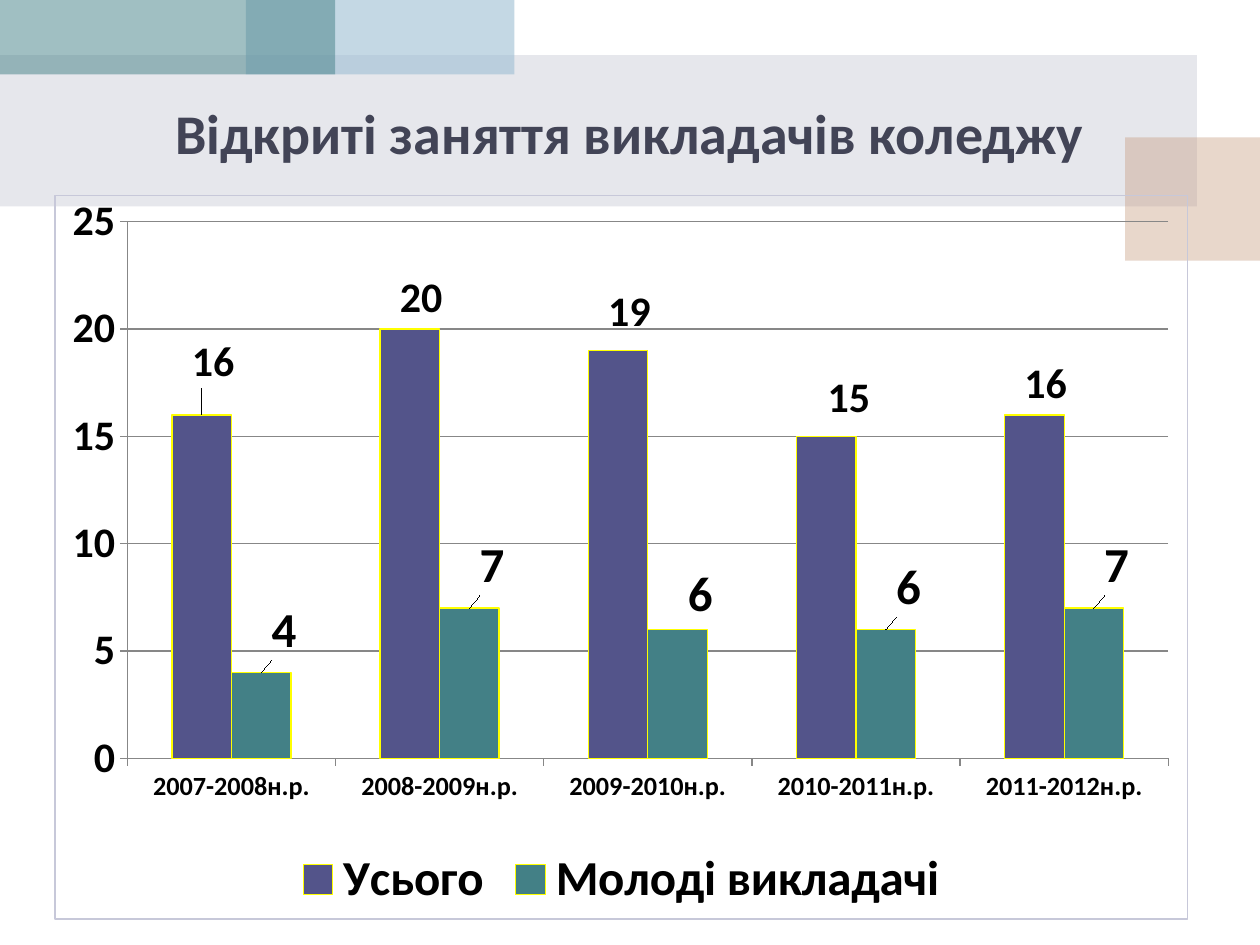
from dataclasses import dataclass

from lxml import etree
from pptx import Presentation
from pptx.chart.data import CategoryChartData
from pptx.dml.color import RGBColor
from pptx.enum.chart import XL_CHART_TYPE, XL_LABEL_POSITION, XL_LEGEND_POSITION, XL_TICK_MARK
from pptx.enum.shapes import MSO_SHAPE
from pptx.enum.text import MSO_ANCHOR, MSO_AUTO_SIZE, PP_ALIGN
from pptx.oxml import parse_xml
from pptx.oxml.ns import qn
from pptx.util import Pt

COLUMNS = XL_CHART_TYPE.COLUMN_CLUSTERED
OUTSIDE_END = XL_LABEL_POSITION.OUTSIDE_END
BOTTOM = XL_LEGEND_POSITION.BOTTOM
TICK_OUT, TICK_NONE = XL_TICK_MARK.OUTSIDE, XL_TICK_MARK.NONE
RECTANGLE = MSO_SHAPE.RECTANGLE
MIDDLE, CENTER, NO_FIT = MSO_ANCHOR.MIDDLE, PP_ALIGN.CENTER, MSO_AUTO_SIZE.NONE

NAMESPACES = (
    'xmlns:c="http://schemas.openxmlformats.org/drawingml/2006/chart" '
    'xmlns:a="http://schemas.openxmlformats.org/drawingml/2006/main"'
)


@dataclass(frozen=True)
class Theme:
    font: str = "Calibri"
    title: str = "424456"
    text: str = "000000"
    bar_line: str = "FFFF00"
    grid: str = "878787"
    border: str = "C7C8D9"
    title_size: float = 32
    category_size: float = 15
    value_size: float = 24
    legend_size: float = 28
    line_width: float = 0.75


@dataclass(frozen=True)
class Band:
    left: float
    top: float
    width: float
    height: float
    color: str
    opacity: int  # percent


@dataclass(frozen=True)
class Bars:
    name: str
    values: tuple[int, ...]
    color: str
    label_size: float
    label_shifts: tuple[tuple[float, float], ...]  # fractions of the chart


THEME = Theme()
BANDS = (
    Band(0, 31.5, 684, 86.5, "AEB0C1", 30),
    Band(643, 78.5, 77, 70.5, "C69B7E", 40),
    Band(140.5, 0, 153.5, 42.5, "9DBED3", 60),
    Band(0, 0, 191.5, 42.5, "438086", 50),
)
YEARS = [f"{year}-{year + 1}н.р." for year in range(2007, 2012)]
SERIES = (
    Bars("Усього", (16, 20, 19, 15, 16), "53548A", 24,
         ((0.01, -0.03), (0.01, 0), (0.01, -0.01), (0.02, -0.01), (0.01, 0))),
    Bars("Молоді викладачі", (4, 7, 6, 6, 7), "438086", 28,
         ((0.02, -0.01), (0.02, -0.01), (0.02, 0), (0.02, -0.01), (0.02, -0.01))),
)


def format_font(font, size: float, color: str = THEME.text) -> None:
    formats = {"name": THEME.font, "size": Pt(size), "bold": True}
    for key, value in formats.items():
        setattr(font, key, value)
    font.color.rgb = RGBColor.from_string(color)


def format_line(line, color: str) -> None:
    line.color.rgb = RGBColor.from_string(color)
    line.width = Pt(THEME.line_width)


def manual_layout(**values):
    parts = "".join(f'<c:{key} val="{value}"/>' for key, value in values.items())
    return parse_xml(
        f"<c:layout {NAMESPACES}><c:manualLayout>{parts}</c:manualLayout></c:layout>")


def draw_band(page, band: Band) -> None:
    box = page.shapes.add_shape(
        RECTANGLE, Pt(band.left), Pt(band.top), Pt(band.width), Pt(band.height))
    box.shadow.inherit = False
    box.line.fill.background()
    box.fill.solid()
    box.fill.fore_color.rgb = RGBColor.from_string(band.color)
    color = box.fill._xPr.find(f".//{qn('a:srgbClr')}")
    etree.SubElement(color, qn("a:alpha"), val=str(band.opacity * 1000))


def format_bars(series, bars: Bars) -> None:
    series.format.fill.solid()
    series.format.fill.fore_color.rgb = RGBColor.from_string(bars.color)
    format_line(series.format.line, THEME.bar_line)
    labels = series.data_labels
    formats = {"show_value": True, "number_format": "0",
               "number_format_is_linked": False, "position": OUTSIDE_END}
    for key, value in formats.items():
        setattr(labels, key, value)
    format_font(labels.font, bars.label_size)
    # Nudge each label away from its usual place
    for index, (x, y) in enumerate(bars.label_shifts):
        label = series.points[index].data_label
        format_font(label.font, bars.label_size)
        label.position = OUTSIDE_END
        number = series._element.findall(f".//{qn('c:dLbl')}/{qn('c:idx')}")[index]
        number.addnext(manual_layout(x=x, y=y))


def draw_chart(page) -> None:
    data = CategoryChartData(number_format="0")
    data.categories = YEARS
    for bars in SERIES:
        data.add_series(bars.name, bars.values)
    chart = page.shapes.add_chart(
        COLUMNS, Pt(31), Pt(111.5), Pt(648), Pt(414), data).chart
    format_font(chart.font, 18)
    chart.has_title = False

    # Columns
    plot = chart.plots[0]
    for key, value in {"gap_width": 150, "overlap": 0, "vary_by_categories": False}.items():
        setattr(plot, key, value)
    for series, bars in zip(plot.series, SERIES):
        format_bars(series, bars)

    # Axes and grid
    scale = chart.value_axis
    for key, value in {"minimum_scale": 0, "maximum_scale": 25, "major_unit": 5,
                       "has_major_gridlines": True}.items():
        setattr(scale, key, value)
    format_line(scale.major_gridlines.format.line, THEME.grid)
    for axis, size in ((chart.category_axis, THEME.category_size),
                       (scale, THEME.value_size)):
        axis.major_tick_mark, axis.minor_tick_mark = TICK_OUT, TICK_NONE
        format_font(axis.tick_labels.font, size)
        format_line(axis.format.line, THEME.grid)

    # Legend
    chart.has_legend = True
    chart.legend.position = BOTTOM
    chart.legend.include_in_layout = False
    format_font(chart.legend.font, THEME.legend_size)

    # Plot area and outer border
    body = chart._chartSpace.find(qn("c:chart"))
    area = body.find(qn("c:plotArea"))
    for layout in area.findall(qn("c:layout")):
        area.remove(layout)
    area.insert(0, manual_layout(layoutTarget="inner", xMode="edge", yMode="edge",
                                 x=0.064, y=0.036, w=0.919, h=0.742))
    body.addnext(parse_xml(
        f'<c:spPr {NAMESPACES}><a:noFill/><a:ln w="{Pt(THEME.line_width)}"><a:solidFill>'
        f'<a:srgbClr val="{THEME.border}"/></a:solidFill></a:ln></c:spPr>'))


def draw_title(page, text: str) -> None:
    box = page.shapes.title
    formats = {"left": Pt(8.5), "top": Pt(37.5), "width": Pt(703), "height": Pt(75.5)}
    for key, value in formats.items():
        setattr(box, key, value)
    frame = box.text_frame
    for key, value in {"vertical_anchor": MIDDLE, "word_wrap": True,
                       "auto_size": NO_FIT}.items():
        setattr(frame, key, value)
    para = frame.paragraphs[0]
    para.alignment = CENTER
    span = para.add_run()
    span.text = text
    format_font(span.font, THEME.title_size, THEME.title)
    # Bring the title in front of the bands
    box._element.getparent().append(box._element)


def main() -> None:
    deck = Presentation()
    deck.slide_width, deck.slide_height = Pt(720), Pt(540)
    page = deck.slides.add_slide(deck.slide_layouts[5])
    for band in BANDS:
        draw_band(page, band)
    draw_chart(page)
    draw_title(page, "Відкриті заняття викладачів коледжу")
    deck.save("out.pptx")


if __name__ == "__main__":
    main()
